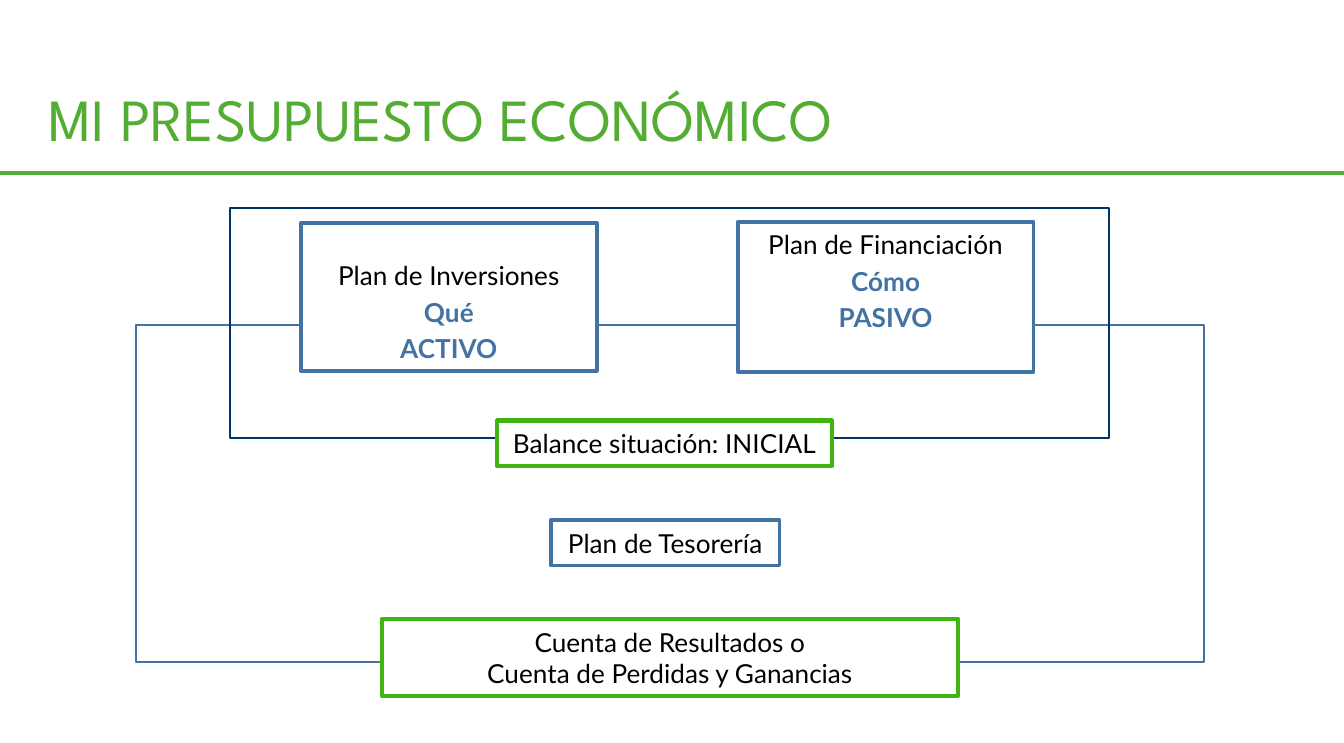
from lxml import etree
from pptx import Presentation
from pptx.dml.color import RGBColor
from pptx.enum.shapes import MSO_CONNECTOR, MSO_SHAPE
from pptx.enum.text import MSO_ANCHOR, MSO_AUTO_SIZE, PP_ALIGN
from pptx.oxml.ns import qn
from pptx.util import Inches, Pt

RECT = MSO_SHAPE.RECTANGLE
STRAIGHT = MSO_CONNECTOR.STRAIGHT
TOP, MIDDLE, BOTTOM = MSO_ANCHOR.TOP, MSO_ANCHOR.MIDDLE, MSO_ANCHOR.BOTTOM
LEFT, CENTER = PP_ALIGN.LEFT, PP_ALIGN.CENTER
GROW = MSO_AUTO_SIZE.SHAPE_TO_FIT_TEXT

WIDTH, HEIGHT = 10, 5.53
RULE_Y = 1.29
COLORS = {"title": "53AD32", "rule": "52AE32", "blue": "4372A5", "navy": "003366",
          "green": "3FB512", "text": "000000", "paper": "FFFFFF"}
BODY = {"name": "Lato", "size": Pt(14), "bold": False}
STRONG = {**BODY, "bold": True}
HEADING = {"name": "League Spartan", "size": Pt(32), "bold": False}


def color(name):
    """Return the named palette colour."""
    return RGBColor.from_string(COLORS[name])


def set_line(s, name, width):
    """Set the line colour and width in points."""
    s.line.color.rgb = color(name)
    s.line.width = Pt(width)


def write(p, text, font, name, align):
    """Write one formatted run into a paragraph."""
    p.alignment = align
    r = p.add_run()
    r.text = text
    for key, value in font.items():
        setattr(r.font, key, value)
    r.font.color.rgb = color(name)


def add_title(slide, text):
    """Place and fill the title placeholder."""
    s = slide.shapes.title
    s.left, s.top, s.width, s.height = map(Inches, (0.26, 0.56, 9.15, 0.64))
    tf = s.text_frame
    tf.auto_size, tf.vertical_anchor = GROW, TOP
    write(tf.paragraphs[0], text, HEADING, "title", LEFT)


def add_rule(slide):
    """Draw the full-width rule below the title."""
    y = Inches(RULE_Y)
    s = slide.shapes.add_connector(STRAIGHT, 0, y, Inches(WIDTH), y)
    set_line(s, "rule", 2)
    etree.SubElement(s._element.spPr, qn("a:effectLst"))


def add_frame(slide, box, name, width=1):
    """Add an unfilled rectangle."""
    s = slide.shapes.add_shape(RECT, *map(Inches, box))
    s.shadow.inherit = False
    s.fill.background()
    set_line(s, name, width)
    return s


def add_box(slide, box, name, lines, width=2, wrap=True, anchor=MIDDLE):
    """Add a white rectangle with centred lines of text."""
    s = add_frame(slide, box, name, width)
    s.fill.solid()
    s.fill.fore_color.rgb = color("paper")
    tf = s.text_frame
    tf.word_wrap, tf.vertical_anchor = wrap, anchor
    for i, text in enumerate(lines):
        p = tf.add_paragraph() if i else tf.paragraphs[0]
        write(p, text, BODY, "text", CENTER)
    return s


def add_plan(slide, box, heading, details, anchor):
    """Add a plan box with a heading and bold blue details."""
    s = add_box(slide, box, "blue", [heading], anchor=anchor)
    for text in details:
        p = s.text_frame.add_paragraph()
        p.space_before = Pt(2.8)
        write(p, text, STRONG, "blue", CENTER)


def main():
    """Build the budget slide."""
    prs = Presentation()
    prs.slide_width, prs.slide_height = Inches(WIDTH), Inches(HEIGHT)
    slide = prs.slides.add_slide(prs.slide_layouts[5])
    add_title(slide, "MI PRESUPUESTO ECONÓMICO")
    add_frame(slide, (1.01, 2.42, 7.95, 2.51), "blue")
    add_frame(slide, (1.71, 1.55, 6.54, 1.71), "navy")
    add_plan(slide, (2.24, 1.66, 2.2, 1.1), "Plan de Inversiones", ["Qué", "ACTIVO"], BOTTOM)
    add_plan(slide, (5.49, 1.65, 2.2, 1.12), "Plan de Financiación", ["Cómo", "PASIVO"], TOP)
    add_box(slide, (3.7, 3.13, 2.49, 0.34), "green", ["Balance situación: INICIAL"], 2.25, False)
    add_box(slide, (4.1, 3.87, 1.7, 0.34), "blue", ["Plan de Tesorería"], wrap=False)
    add_box(slide, (2.84, 4.61, 4.29, 0.57), "green",
            ["Cuenta de Resultados o", "Cuenta de Perdidas y Ganancias"])
    add_rule(slide)
    prs.save("out.pptx")


if __name__ == "__main__":
    main()
